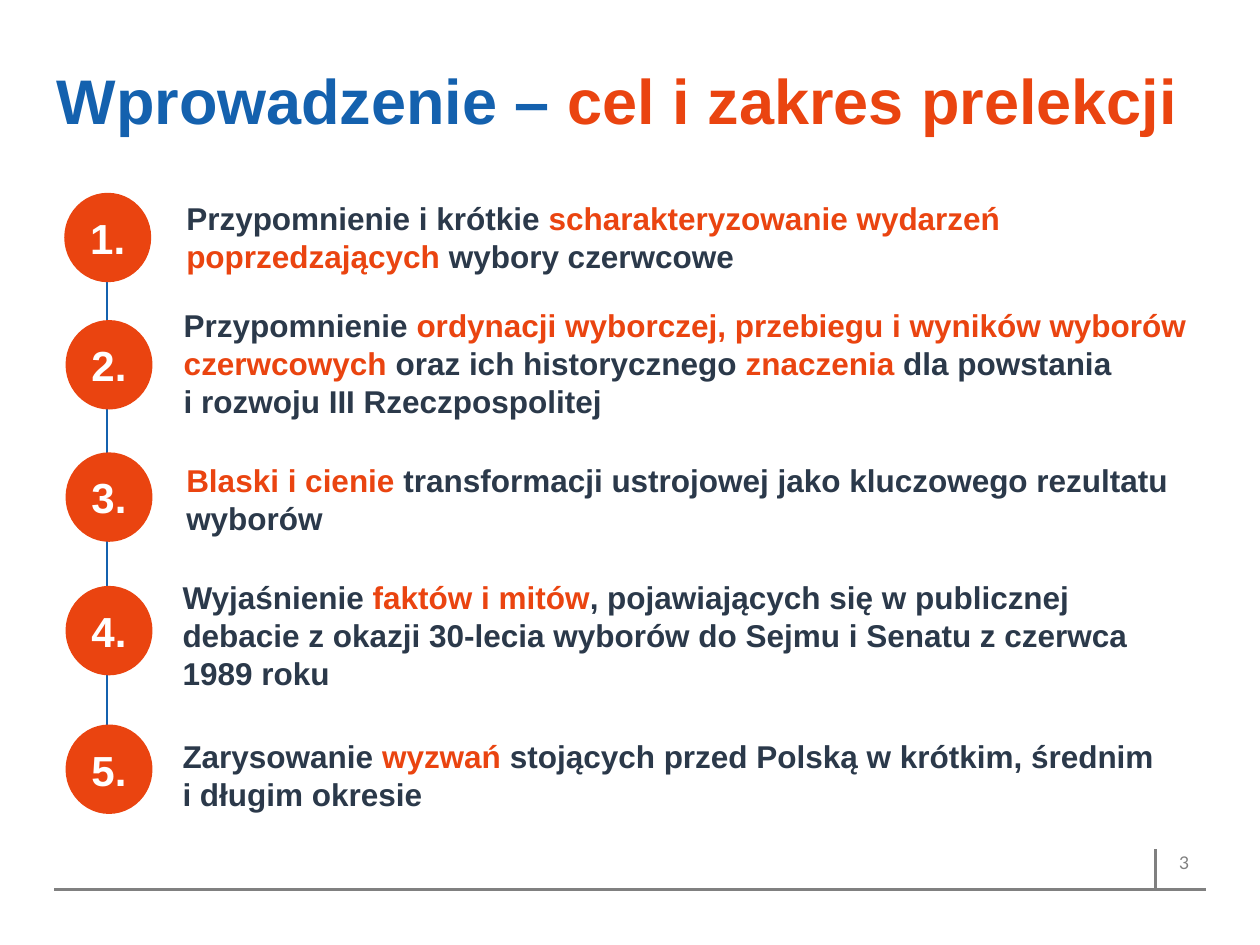
import pptx
import pptx.util
import pptx.dml.color
import pptx.enum.shapes
import pptx.enum.text
import pptx.oxml.ns
from lxml import etree

COLORS = {"blue": "1461AE", "orange": "EA4410", "dark": "2B394A",
          "gray": "808080", "white": "FFFFFF"}
TITLE = [("Wprowadzenie – ", "blue"), ("cel i zakres prelekcji", "orange")]
GOALS = [
    {"circle": (0.51, 1.53), "box": (1.38, 1.53), "lines": 2, "runs": [
        ("Przypomnienie i krótkie ", "dark"),
        ("scharakteryzowanie wydarzeń poprzedzających", "orange"),
        (" wybory czerwcowe", "dark")]},
    {"circle": (0.52, 2.54), "box": (1.36, 2.38), "lines": 3, "runs": [
        ("Przypomnienie ", "dark"),
        ("ordynacji wyborczej, przebiegu i wyników wyborów czerwcowych", "orange"),
        (" oraz ich historycznego ", "dark"), ("znaczenia", "orange"),
        (" dla powstania\ni rozwoju III Rzeczpospolitej", "dark")]},
    {"circle": (0.52, 3.59), "box": (1.38, 3.61), "lines": 2, "runs": [
        ("Blaski i cienie ", "orange"),
        ("transformacji ustrojowej jako kluczowego rezultatu wyborów", "dark")]},
    {"circle": (0.52, 4.65), "box": (1.35, 4.54), "lines": 3, "runs": [
        ("Wyjaśnienie ", "dark"), ("faktów i mitów", "orange"),
        (", pojawiających się w publicznej debacie z okazji 30-lecia wyborów "
         "do Sejmu i Senatu z czerwca 1989 roku", "dark")]},
    {"circle": (0.52, 5.75), "box": (1.35, 5.8), "lines": 2, "runs": [
        ("Zarysowanie ", "dark"), ("wyzwań ", "orange"),
        ("stojących przed Polską w krótkim, średnim\ni długim okresie", "dark")]},
]
RULES = [
    ((9.57, 7.06), (0.43, 7.06), "gray", 2),
    ((9.17, 6.74), (9.17, 7.06), "gray", 2),
    ((0.85, 2.23), (0.85, 6.27), "blue", 1.5),
]
CIRCLE_W, CIRCLE_H = 0.69, 0.71
BOX_W, BOX_PAD, LINE_H = 8.19, 0.11, 0.3
SHAPES = pptx.enum.shapes.MSO_SHAPE
ALIGN = pptx.enum.text.PP_ALIGN
ANCHOR = pptx.enum.text.MSO_ANCHOR
FIT = pptx.enum.text.MSO_AUTO_SIZE
inch = pptx.util.Inches


def color(name):
    return pptx.dml.color.RGBColor.from_string(COLORS[name])


def write(sp, runs, size, font="Arial", bold=True, align=ALIGN.LEFT,
          anchor=ANCHOR.TOP, fit=FIT.NONE):
    tf = sp.text_frame
    frame = {"word_wrap": True, "vertical_anchor": anchor, "auto_size": fit}
    for key, value in frame.items():
        setattr(tf, key, value)
    p = tf.paragraphs[0]
    p.alignment = align
    look = {"name": font, "size": pptx.util.Pt(size), "bold": bold}
    for text, tone in runs:
        for i, part in enumerate(text.split("\n")):
            if i:
                p.add_line_break()
            r = p.add_run()
            r.text = part
            for key, value in look.items():
                setattr(r.font, key, value)
            r.font.color.rgb = color(tone)


def add_filled(s, kind, at, size, tone):
    sp = s.shapes.add_shape(kind, *map(inch, at + size))
    sp.shadow.inherit = False
    sp.fill.solid()
    sp.fill.fore_color.rgb = color(tone)
    return sp


def add_rule(s, start, end, tone, width):
    c = s.shapes.add_connector(pptx.enum.shapes.MSO_CONNECTOR.STRAIGHT,
                               *map(inch, start + end))
    c.line.color.rgb = color(tone)
    c.line.width = pptx.util.Pt(width)
    etree.SubElement(c._element.spPr, pptx.oxml.ns.qn("a:effectLst"))


def main():
    prs = pptx.Presentation()
    prs.slide_width, prs.slide_height = inch(10), inch(7.5)
    s = prs.slides.add_slide(prs.slide_layouts[5])

    title = s.shapes.title
    place = {"left": 0.35, "top": 0.44, "width": 9.21, "height": 0.71}
    for key, value in place.items():
        setattr(title, key, inch(value))
    write(title, TITLE, 36)

    for rule in RULES:
        add_rule(s, *rule)

    number = s.shapes.add_textbox(*map(inch, (9.26, 6.71, 0.63, 0.5)))
    write(number, [("3", "gray")], 10, font="Lato", bold=False)

    for goal in GOALS:
        size = (BOX_W, BOX_PAD + LINE_H * goal["lines"])
        box = add_filled(s, SHAPES.RECTANGLE, goal["box"], size, "white")
        box.line.color.rgb = color("white")
        box.line.width = pptx.util.Pt(0.75)
        write(box, goal["runs"], 18, fit=FIT.SHAPE_TO_FIT_TEXT)

    for n, goal in enumerate(GOALS, 1):
        circle = add_filled(s, SHAPES.OVAL, goal["circle"], (CIRCLE_W, CIRCLE_H), "orange")
        circle.line.fill.background()
        write(circle, [(f"{n}.", "white")], 24, align=ALIGN.CENTER, anchor=ANCHOR.MIDDLE)

    prs.save("out.pptx")


if __name__ == "__main__":
    main()
